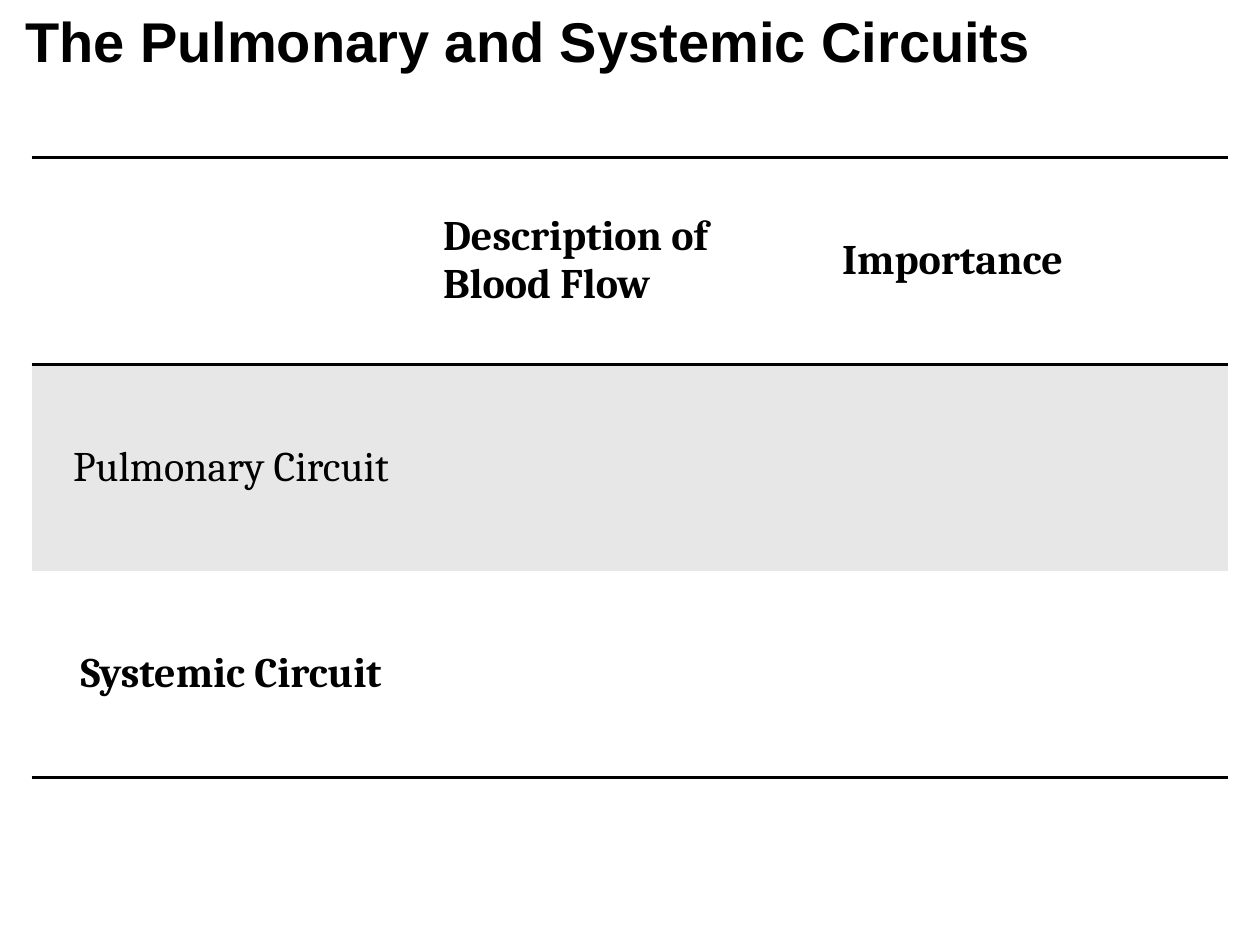
from dataclasses import dataclass

from lxml.etree import SubElement
from pptx import Presentation
from pptx.dml.color import RGBColor
from pptx.enum.text import MSO_ANCHOR, PP_ALIGN
from pptx.oxml import parse_xml
from pptx.oxml.ns import nsdecls, qn
from pptx.util import Inches, Pt


@dataclass(frozen=True)
class Theme:
    ink: str = "000000"
    paper: str = "FFFFFF"
    band: str = "E7E7E7"
    title_font: str = "Arial"
    table_font: str = "Cambria"
    title_size: int = 32
    table_size: int = 24
    rule: int = 2


class SlideBuilder:
    def __init__(self, prs, theme):
        self.theme = theme
        self.s = prs.slides.add_slide(prs.slide_layouts[5])

    def fill(self, target, color):
        target.fill.solid()
        target.fill.fore_color.rgb = RGBColor.from_string(color)

    def format_runs(self, p, font, size, bold, align):
        p.alignment = align
        for r in p.runs:
            r.font.name = font
            r.font.size = Pt(size)
            r.font.bold = bold
            r.font.color.rgb = RGBColor.from_string(self.theme.ink)

    def title(self, text, left, top, width, height):
        sp = self.s.shapes.title
        sp.left, sp.top = Inches(left), Inches(top)
        sp.width, sp.height = Inches(width), Inches(height)
        self.fill(sp, self.theme.paper)
        tf = sp.text_frame
        tf.text = text
        tf.word_wrap = True
        tf.vertical_anchor = MSO_ANCHOR.MIDDLE
        tf.margin_left = Inches(0.2)
        self.format_runs(tf.paragraphs[0], self.theme.title_font,
                         self.theme.title_size, True, PP_ALIGN.LEFT)

    def borders(self, cell, ruled):
        tc_pr = cell._tc.get_or_add_tcPr()
        for i, side in enumerate("LRTB"):
            ln = parse_xml(f"<a:ln{side} {nsdecls('a')}/>")
            if side in ruled:
                ln.set("w", str(Pt(self.theme.rule)))
                solid = SubElement(ln, qn("a:solidFill"))
                SubElement(solid, qn("a:srgbClr")).set("val", self.theme.ink)
            else:
                ln.set("w", "0")
                SubElement(ln, qn("a:noFill"))
            tc_pr.insert(i, ln)

    def table(self, rows, styles, left, top, width, height):
        n_rows, n_cols = len(rows), len(rows[0])
        frame = self.s.shapes.add_table(n_rows, n_cols, Inches(left), Inches(top),
                                        Inches(width), Inches(height))
        table = frame.table
        table.first_row = table.horz_banding = False
        for row, texts, (color, bold, align, ruled) in zip(table.rows, rows, styles):
            for cell, text in zip(row.cells, texts):
                self.fill(cell, color)
                self.borders(cell, ruled)
                cell.vertical_anchor = MSO_ANCHOR.MIDDLE
                if text:
                    cell.text_frame.text = text
                    self.format_runs(cell.text_frame.paragraphs[0], self.theme.table_font,
                                     self.theme.table_size, bold, align)


def main():
    """Build the slide on the pulmonary and systemic circuits."""
    prs = Presentation()
    prs.slide_width, prs.slide_height = Inches(10), Inches(7.5)
    theme = Theme()
    slide = SlideBuilder(prs, theme)
    slide.title("The Pulmonary and Systemic Circuits", 0, 0, 10, 0.64)
    rows = [
        ("", "Description of Blood Flow", "Importance"),
        ("Pulmonary Circuit", "", ""),
        ("Systemic Circuit", "", ""),
    ]
    styles = [
        (theme.paper, True, PP_ALIGN.LEFT, "TB"),
        (theme.band, False, PP_ALIGN.CENTER, "T"),
        (theme.paper, True, PP_ALIGN.CENTER, "B"),
    ]
    slide.table(rows, styles, 0.25, 1.25, 9.5, 4.92)
    prs.save("out.pptx")


if __name__ == "__main__":
    main()
